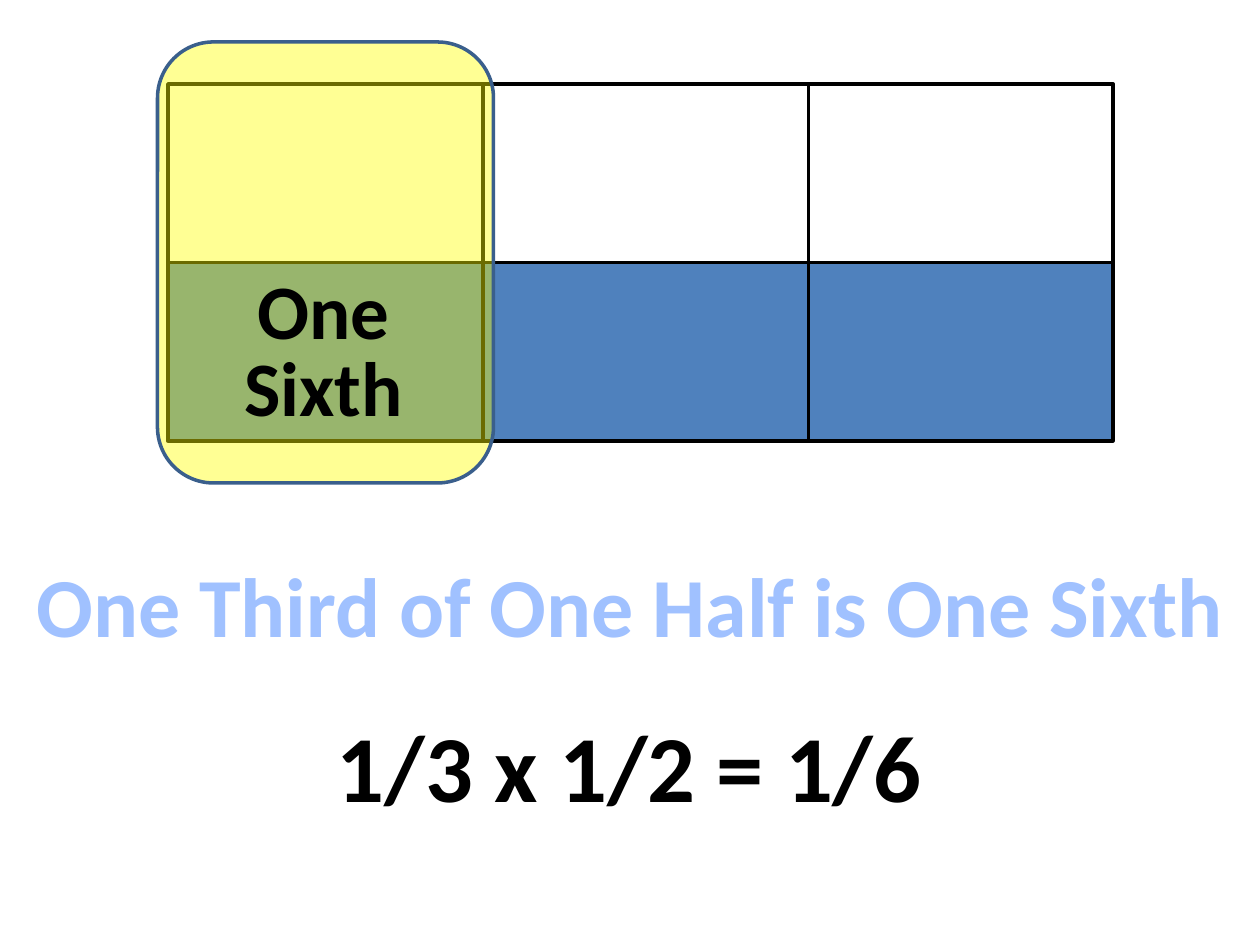
"""Build a slide that shows one third of one half as one sixth."""
from dataclasses import dataclass
from typing import Optional

import lxml.etree
import pptx
import pptx.dml.color
import pptx.enum.shapes
import pptx.enum.text
import pptx.oxml.ns
import pptx.util

RGBColor = pptx.dml.color.RGBColor
Shapes = pptx.enum.shapes.MSO_SHAPE

PX = 7620
FONT = "Calibri"
BLACK = RGBColor(0x00, 0x00, 0x00)
BLUE = RGBColor(0x4F, 0x81, 0xBD)
PALE_BLUE = RGBColor(0xA0, 0xC1, 0xFF)
YELLOW = RGBColor(0xFF, 0xFF, 0x00)
DARK_BLUE = RGBColor(0x3A, 0x5F, 0x8C)

GRID_LEFT, GRID_TOP, GRID_WIDTH, HALF_HEIGHT = 160, 80, 900, 170
THIRD_DIVIDERS = (460, 770)


@dataclass(frozen=True)
class Box:
    left: int
    top: int
    width: int
    height: int

    def emu(self) -> tuple[int, int, int, int]:
        return (self.left * PX, self.top * PX, self.width * PX, self.height * PX)


@dataclass(frozen=True)
class Area:
    box: Box
    preset: Shapes
    fill: Optional[RGBColor]
    line: RGBColor
    opacity: int = 100


@dataclass(frozen=True)
class Label:
    box: Box
    lines: tuple[str, ...]
    size: int
    color: RGBColor
    spacing: Optional[int] = None


HALVES = [
    Area(Box(GRID_LEFT, GRID_TOP + row * HALF_HEIGHT, GRID_WIDTH, HALF_HEIGHT),
         Shapes.RECTANGLE, fill, BLACK)
    for row, fill in enumerate((None, BLUE))
]
HIGHLIGHT = Area(Box(150, 40, 320, 420), Shapes.ROUNDED_RECTANGLE, YELLOW, DARK_BLUE, 42)
SENTENCE = Label(Box(17, 521, 1166, 109), ("One Third of One Half is One Sixth",), 48, PALE_BLUE)
SIXTH = Label(Box(220, 259, 176, 161), ("One", "Sixth"), 44, BLACK, 44)
EQUATION = Label(Box(306, 668, 587, 121), ("1/3 x 1/2 = 1/6",), 54, BLACK)


def draw_area(slide: pptx.slide.Slide, area: Area) -> None:
    shape = slide.shapes.add_shape(area.preset, *area.box.emu())
    shape.shadow.inherit = False
    shape.line.color.rgb = area.line
    shape.line.width = pptx.util.Pt(2)
    if area.fill is None:
        shape.fill.background()
        return
    shape.fill.solid()
    shape.fill.fore_color.rgb = area.fill
    if area.opacity < 100:
        color = shape.fill._xPr.find(".//" + pptx.oxml.ns.qn("a:srgbClr"))
        alpha = lxml.etree.SubElement(color, pptx.oxml.ns.qn("a:alpha"))
        alpha.set("val", str(area.opacity * 1000))


def draw_divider(slide: pptx.slide.Slide, x: int) -> None:
    divider = slide.shapes.add_connector(
        pptx.enum.shapes.MSO_CONNECTOR.STRAIGHT,
        x * PX, GRID_TOP * PX, x * PX, (GRID_TOP + 2 * HALF_HEIGHT) * PX)
    divider.line.color.rgb = BLACK
    divider.line.width = pptx.util.Pt(2)
    lxml.etree.SubElement(divider._element.spPr, pptx.oxml.ns.qn("a:effectLst"))


def write_label(shape: pptx.shapes.autoshape.Shape, label: Label) -> None:
    shape.left, shape.top, shape.width, shape.height = label.box.emu()
    frame = shape.text_frame
    frame.word_wrap = False
    frame.auto_size = pptx.enum.text.MSO_AUTO_SIZE.SHAPE_TO_FIT_TEXT
    frame.vertical_anchor = pptx.enum.text.MSO_ANCHOR.TOP
    for index, line in enumerate(label.lines):
        paragraph = frame.add_paragraph() if index else frame.paragraphs[0]
        paragraph.alignment = pptx.enum.text.PP_ALIGN.CENTER
        if label.spacing:
            paragraph.line_spacing = pptx.util.Pt(label.spacing)
        run = paragraph.add_run()
        run.text = line
        run.font.name = FONT
        run.font.size = pptx.util.Pt(label.size)
        run.font.bold = True
        run.font.color.rgb = label.color


def main() -> None:
    deck = pptx.Presentation()
    deck.slide_width, deck.slide_height = 1200 * PX, 900 * PX
    slide = deck.slides.add_slide(deck.slide_layouts.get_by_name("Title Only"))
    write_label(slide.shapes.title, SENTENCE)
    for half in HALVES:
        draw_area(slide, half)
    for x in THIRD_DIVIDERS:
        draw_divider(slide, x)
    draw_area(slide, HIGHLIGHT)
    for label in (SIXTH, EQUATION):
        write_label(slide.shapes.add_textbox(*label.box.emu()), label)
    deck.save("out.pptx")


if __name__ == "__main__":
    main()
